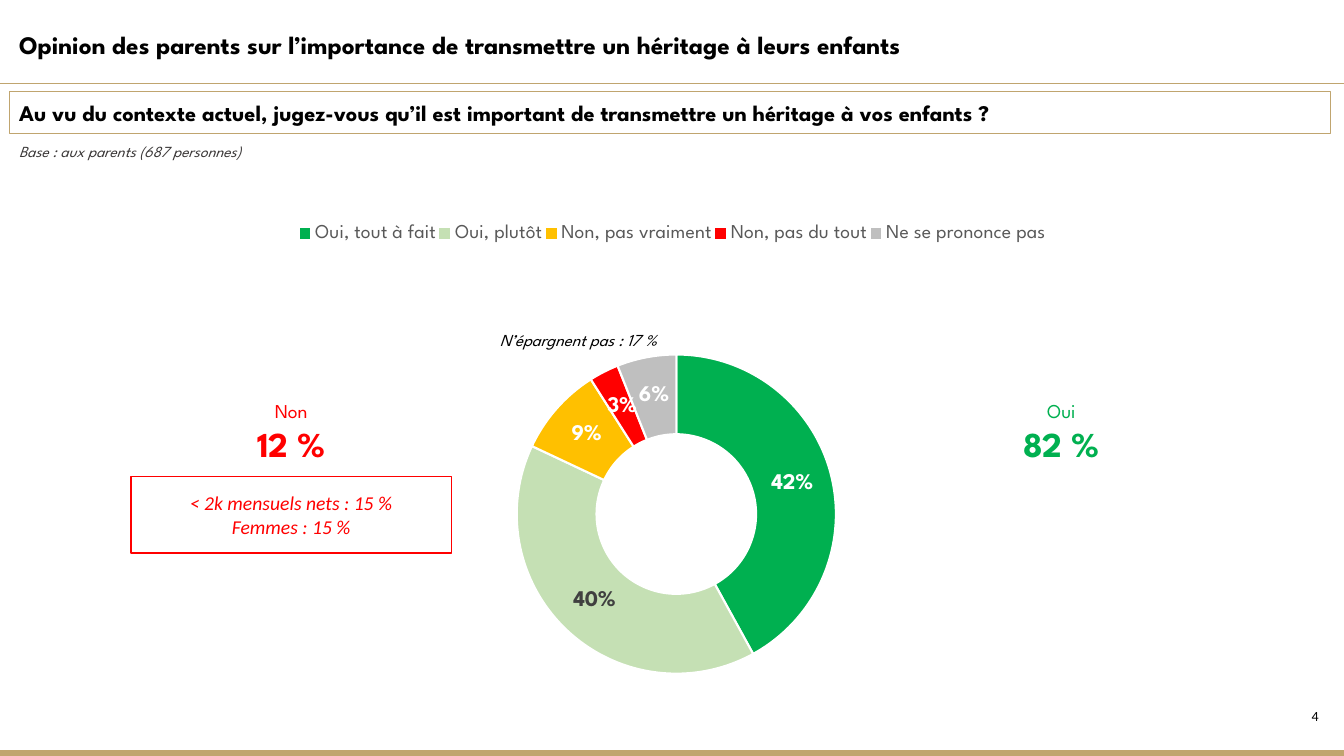
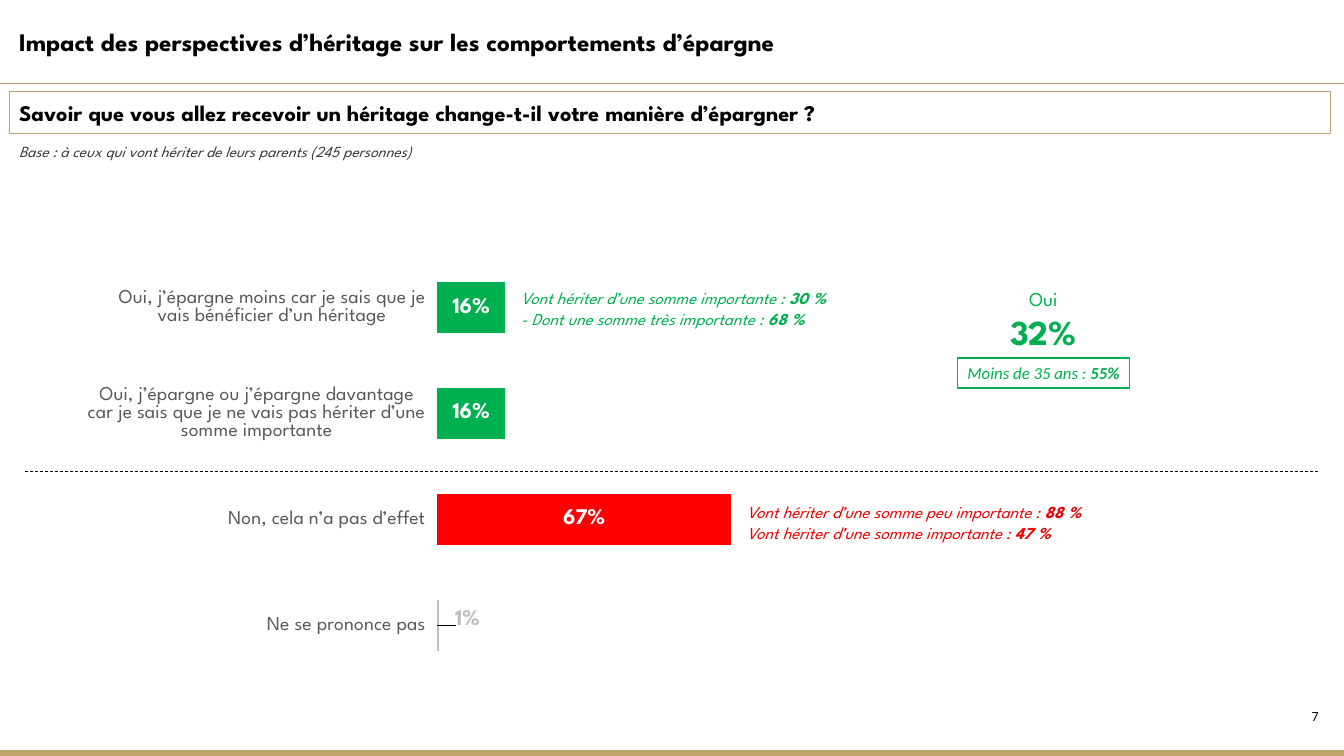
from dataclasses import dataclass
from typing import Optional

from pptx import Presentation, util as u
from pptx.chart import data as chart_data
from pptx.dml import color as dml
from pptx.enum import chart as charts, dml as lines, shapes, text
from pptx.oxml import parse_xml
from pptx.oxml.ns import nsdecls, qn

COLORS = {
    "gold": "C0A56F", "black": "000000", "white": "FFFFFF", "base": "3B3838",
    "green": "00B050", "pale_green": "C5E0B4", "amber": "FFC000",
    "red": "FF0000", "dark_red": "EE0000", "silver": "BFBFBF",
    "grey": "595959", "label": "404040",
}
SPARTAN, CALIBRI = "League Spartan", "Calibri"
WIDTH, HEIGHT = 33.87, 19.05
LEFT, CENTER, RIGHT = text.PP_ALIGN.LEFT, text.PP_ALIGN.CENTER, text.PP_ALIGN.RIGHT
TOP, MIDDLE = text.MSO_ANCHOR.TOP, text.MSO_ANCHOR.MIDDLE


@dataclass(frozen=True)
class Box:
    left: float
    top: float
    width: float
    height: float

    def lengths(self) -> tuple:
        return tuple(u.Cm(v) for v in (self.left, self.top, self.width, self.height))


@dataclass(frozen=True)
class Run:
    text: str
    size: float = 12
    color: str = "black"
    bold: bool = False
    italic: bool = False
    font: str = SPARTAN


@dataclass(frozen=True)
class Label:
    box: Box
    paragraphs: list[list[Run]]
    align: text.PP_ALIGN = LEFT
    anchor: text.MSO_ANCHOR = TOP
    border: Optional[str] = None
    border_width: float = 1
    side_margin: float = 0.25


@dataclass(frozen=True)
class Header:
    title: str
    title_top: float
    question: str
    base: str
    number: str


def rgb(name: str) -> dml.RGBColor:
    return dml.RGBColor.from_string(COLORS[name])


# Text
def style_font(font, size: float, color: str, bold=False, italic=False, name=SPARTAN) -> None:
    font.name, font.size = name, u.Pt(size)
    font.bold, font.italic = bold, italic
    font.color.rgb = rgb(color)


def write_text(shape, label: Label) -> None:
    frame = shape.text_frame
    frame.word_wrap = True
    frame.auto_size = text.MSO_AUTO_SIZE.NONE
    frame.vertical_anchor = label.anchor
    frame.margin_left = frame.margin_right = u.Cm(label.side_margin)
    frame.margin_top = frame.margin_bottom = u.Cm(0.13)
    for index, runs in enumerate(label.paragraphs):
        paragraph = frame.add_paragraph() if index else frame.paragraphs[0]
        paragraph.alignment = label.align
        for item in runs:
            run = paragraph.add_run()
            run.text = item.text
            style_font(run.font, item.size, item.color, item.bold, item.italic, item.font)


def add_label(slide, label: Label) -> None:
    if label.border:
        shape = slide.shapes.add_shape(shapes.MSO_SHAPE.RECTANGLE, *label.box.lengths())
        shape.shadow.inherit = False
        shape.fill.background()
        shape.line.color.rgb = rgb(label.border)
        shape.line.width = u.Pt(label.border_width)
    else:
        shape = slide.shapes.add_textbox(*label.box.lengths())
    write_text(shape, label)


def total(box: Box, answer: str, share: str, color: str) -> Label:
    return Label(box, [[Run(answer, 14, color)], [Run(share, 25, color, bold=True)]], CENTER)


def detail(wording: str, share: str, color: str, font: str = SPARTAN) -> list[Run]:
    return [Run(wording, 12, color, italic=True, font=font),
            Run(share, 12, color, bold=True, italic=True, font=font)]


# Parts shared by the slides
def add_rule(slide, left: float, right: float, top: float, color: str, dashed=False) -> None:
    rule = slide.shapes.add_connector(
        shapes.MSO_CONNECTOR.STRAIGHT, u.Cm(left), u.Cm(top), u.Cm(right), u.Cm(top))
    rule.line.color.rgb = rgb(color)
    rule.line.width = u.Pt(0.5)
    if dashed:
        rule.line.dash_style = lines.MSO_LINE.DASH
    rule._element.spPr.append(parse_xml(f"<a:effectLst {nsdecls('a')}/>"))


def add_framed_slide(presentation, header: Header):
    slide = presentation.slides.add_slide(presentation.slide_layouts[5])
    add_rule(slide, 0, WIDTH, 2.09, "gold")
    band = slide.shapes.add_shape(
        shapes.MSO_SHAPE.RECTANGLE, *Box(0, 18.92, WIDTH, 0.13).lengths())
    band.shadow.inherit = False
    band.fill.solid()
    band.fill.fore_color.rgb = band.line.color.rgb = rgb("gold")
    band.line.width = u.Pt(1)

    title = slide.shapes.title
    title_label = Label(Box(0.23, header.title_top, 27.3, 1.02),
                        [[Run(header.title, 18, bold=True)]])
    title.left, title.top, title.width, title.height = title_label.box.lengths()
    write_text(title, title_label)

    add_label(slide, Label(Box(0.23, 2.31, 33.3, 1.06), [[Run(header.question, 16, bold=True)]],
                           anchor=MIDDLE, border="gold", border_width=0.75))
    add_label(slide, Label(Box(0.23, 3.46, 33.3, 0.69),
                           [[Run(header.base, 11, "base", italic=True)]]))
    add_label(slide, Label(Box(31.09, 17.7, 2.39, 0.69),
                           [[Run(header.number, 10, font=CALIBRI)]], RIGHT))
    return slide


# Charts
def set_layout(parent, position: int, inner=False, **fractions: float) -> None:
    for old in parent.findall(qn("c:layout")):
        parent.remove(old)
    target = '<c:layoutTarget val="inner"/>' if inner else ""
    modes = "" if "w" not in fractions else '<c:xMode val="edge"/><c:yMode val="edge"/>'
    values = "".join(f'<c:{key} val="{value}"/>' for key, value in fractions.items())
    parent.insert(position, parse_xml(
        f"<c:layout {nsdecls('c')}><c:manualLayout>{target}{modes}{values}"
        "</c:manualLayout></c:layout>"))


def add_share_chart(slide, kind, box: Box, shares: dict[str, float], colors: list[str],
                    plot_area: dict[str, float]):
    data = chart_data.CategoryChartData(number_format="0%")
    data.categories = list(shares)
    data.add_series("Series 1", list(shares.values()))
    chart = slide.shapes.add_chart(kind, *box.lengths(), data).chart
    chart.has_title = chart.has_legend = False
    style_font(chart.font, 10, "black")
    set_layout(chart.element.xpath("//c:plotArea")[0], 0, inner=True, **plot_area)
    plot = chart.plots[0]
    plot.vary_by_categories = False
    labels = plot.series[0].data_labels
    labels.show_value, labels.show_percentage = True, False
    labels.number_format, labels.number_format_is_linked = "0%", False
    style_font(labels.font, 16, "white", bold=True)
    for index, color in enumerate(colors):
        point = plot.series[0].points[index]
        point.format.fill.solid()
        point.format.fill.fore_color.rgb = rgb(color)
        point.format.line.color.rgb = rgb("white")
        point.format.line.width = u.Pt(1.5)
    return chart


def add_opinion_chart(slide) -> None:
    shares = {"Oui, tout à fait": 0.42, "Oui, plutôt": 0.4, "Non, pas vraiment": 0.09,
              "Non, pas du tout": 0.03, "Ne se prononce pas": 0.06}
    chart = add_share_chart(
        slide, charts.XL_CHART_TYPE.DOUGHNUT, Box(7.47, 4.71, 19.15, 12.4), shares,
        ["green", "pale_green", "amber", "red", "silver"],
        dict(x=0.29, y=0.34, w=0.42, h=0.65))
    chart.plots[0].vary_by_categories = True
    chart.element.xpath("//c:holeSize")[0].set("val", "61")
    for index in range(len(shares)):
        label = chart.plots[0].series[0].points[index].data_label
        style_font(label.font, 16, "label" if index == 1 else "white", bold=True)
    chart.has_legend = True
    legend = chart.legend
    legend.position = charts.XL_LEGEND_POSITION.TOP
    legend.include_in_layout = False
    style_font(legend.font, 14, "grey")
    set_layout(chart.element.xpath("//c:legend")[0], 1, x=0.0, y=0.06, w=0.99, h=0.07)


def add_saving_chart(slide) -> None:
    shares = {
        "Oui, j’épargne moins car je sais que je vais bénéficier d’un héritage": 0.16,
        "Oui, j’épargne ou j’épargne davantage car je sais que je ne vais pas hériter "
        "d’une somme importante": 0.16,
        "Non, cela n’a pas d’effet": 0.67,
        "Ne se prononce pas": 0.01,
    }
    chart = add_share_chart(
        slide, charts.XL_CHART_TYPE.BAR_STACKED, Box(2.21, 5.41, 24.88, 12.7), shares,
        ["green", "green", "red", "silver"], dict(x=0.35, y=0.08, w=0.36, h=0.84))
    plot = chart.plots[0]
    plot.gap_width = plot.overlap = 100
    series = plot.series[0]
    series.data_labels.position = charts.XL_LABEL_POSITION.CENTER
    style_font(series.points[3].data_label.font, 16, "silver", bold=True)
    set_layout(chart.element.xpath("//c:dLbl")[0], 1, x=0.03, y=-0.01)

    category_axis, value_axis = chart.category_axis, chart.value_axis
    category_axis.reverse_order = True
    category_axis.format.line.fill.background()
    style_font(category_axis.tick_labels.font, 14, "grey")
    value_axis.visible = value_axis.has_major_gridlines = False
    value_axis.minimum_scale, value_axis.maximum_scale = 0, 0.8


# Slides
def build_opinion_slide(presentation) -> None:
    slide = add_framed_slide(presentation, Header(
        "Opinion des parents sur l’importance de transmettre un héritage à leurs enfants", 0.61,
        "Au vu du contexte actuel, jugez-vous qu’il est important de transmettre "
        "un héritage à vos enfants ?",
        "Base : aux parents (687 personnes)", "4"))
    add_opinion_chart(slide)
    groups = ("< 2k mensuels nets : 15 %", "Femmes : 15 %")
    for label in (
        Label(Box(3.3, 12.01, 8.08, 1.93),
              [[Run(group, 14, "red", italic=True, font=CALIBRI)] for group in groups],
              CENTER, MIDDLE, "red"),
        total(Box(22.71, 9.93, 8.08, 1.93), "Oui", "82 %", "green"),
        total(Box(3.3, 9.93, 8.08, 1.93), "Non", "12 %", "red"),
        Label(Box(11.76, 7.59, 5.64, 1.93), [[Run("N’épargnent pas : 17 %", italic=True)]],
              CENTER, MIDDLE),
    ):
        add_label(slide, label)


def build_saving_slide(presentation) -> None:
    slide = add_framed_slide(presentation, Header(
        "Impact des perspectives d’héritage sur les comportements d’épargne", 0.53,
        "Savoir que vous allez recevoir un héritage change-t-il votre manière d’épargner ?",
        "Base : à ceux qui vont hériter de leurs parents (245 personnes)", "7"))
    add_saving_chart(slide)
    add_rule(slide, 0.64, 33.22, 11.89, "black", dashed=True)
    for label in (
        total(Box(23.77, 7.11, 5.05, 1.93), "Oui", "32%", "green"),
        Label(Box(24.13, 9.02, 4.34, 0.76),
              [detail("Moins de 35 ans : ", "55%", "green", CALIBRI)],
              CENTER, MIDDLE, "green", side_margin=0),
        Label(Box(18.57, 12.32, 10.6, 1.68),
              [detail("Vont hériter d’une somme peu importante : ", "88 %", "dark_red"),
               detail("Vont hériter d’une somme importante : ", "47 %", "dark_red")],
              anchor=MIDDLE),
        Label(Box(12.88, 7.01, 9.7, 1.52),
              [detail("Vont hériter d’une somme importante : ", "30 %", "green"),
               detail("- Dont une somme très importante : ", "68 %", "green")],
              anchor=MIDDLE),
    ):
        add_label(slide, label)


def main() -> None:
    presentation = Presentation()
    presentation.slide_width, presentation.slide_height = u.Cm(WIDTH), u.Cm(HEIGHT)
    build_opinion_slide(presentation)
    build_saving_slide(presentation)
    presentation.save("out.pptx")


if __name__ == "__main__":
    main()
